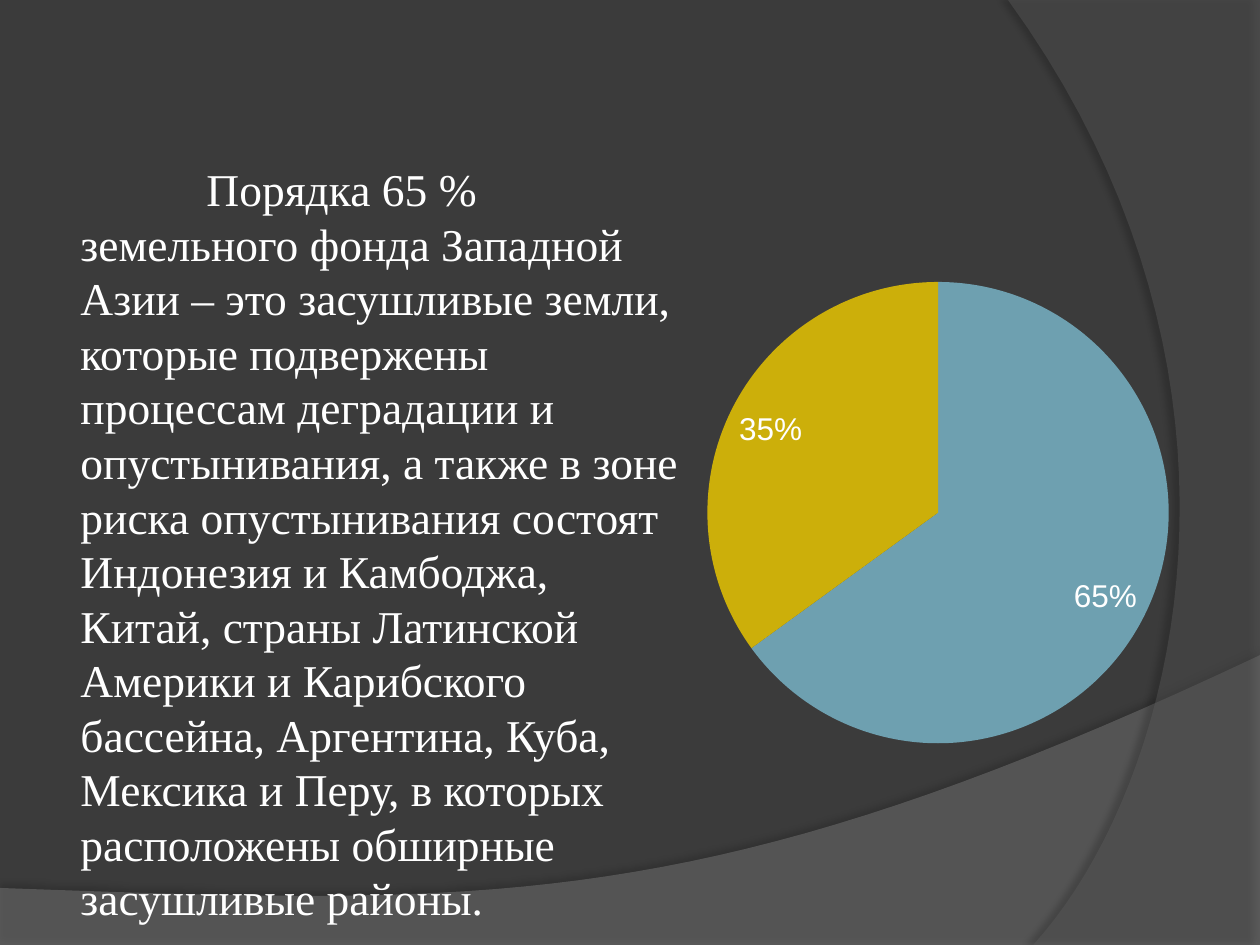
from lxml.etree import SubElement
from pptx import Presentation
from pptx.chart.data import CategoryChartData
from pptx.dml.color import RGBColor
from pptx.enum.chart import XL_CHART_TYPE, XL_LABEL_POSITION
from pptx.oxml.ns import qn
from pptx.util import Inches, Pt

WIDE, HIGH = 10, 7.5
INK = "FFFFFF"
BODY = (
    "Порядка 65 % земельного фонда Западной Азии – это засушливые земли, "
    "которые подвержены процессам деградации и опустынивания, а также в зоне "
    "риска опустынивания состоят Индонезия и Камбоджа, Китай, страны Латинской "
    "Америки и Карибского бассейна, Аргентина, Куба, Мексика и Перу, в которых "
    "расположены обширные засушливые районы."
)


def color(code):
    """Turn a hex string into a colour."""
    return RGBColor.from_string(code)


def place(box):
    """Turn percent shares of the slide into lengths."""
    return [Inches(part * side / 100) for part, side in zip(box, (WIDE, HIGH) * 2)]


def curve(ends, steps=40):
    """List the points of a cubic curve through four control points."""
    spots = []
    for step in range(steps + 1):
        t = step / steps
        parts = ((1 - t) ** 3, 3 * t * (1 - t) ** 2, 3 * t * t * (1 - t), t ** 3)
        spots.append(tuple(sum(p * end[k] for p, end in zip(parts, ends)) for k in (0, 1)))
    return spots


def add_band(slide, box, spots, fill, clear, shade):
    """Draw a see-through band with a soft shadow, its spots being shares of the box."""
    left, top, wide, high = place(box)
    points = [(round(left + x * wide), round(top + y * high)) for x, y in spots]
    form = slide.shapes.build_freeform(*points[0], scale=1.0)
    form.add_line_segments(points[1:], close=True)
    band = form.convert_to_shape()
    band.shadow.inherit = False
    band.line.fill.background()
    band.fill.solid()
    band.fill.fore_color.rgb = color(fill)
    props = band.element.spPr
    tint = props.find(qn("a:solidFill"))[0]
    SubElement(tint, qn("a:alpha"), val=str(clear * 1000))
    dark, blur, gap, turn = shade
    cast = SubElement(
        props.find(qn("a:effectLst")), qn("a:outerShdw"), blurRad=str(Pt(blur)),
        dist=str(Pt(gap)), dir=str(turn * 60000), algn="ctr", rotWithShape="0")
    tone = SubElement(cast, qn("a:srgbClr"), val="000000")
    SubElement(tone, qn("a:alpha"), val=str(dark * 1000))


def add_body(slide, box):
    """Write the paragraph with its first line set in."""
    frame = slide.shapes.add_textbox(*place(box)).text_frame
    frame.word_wrap = True
    para = frame.paragraphs[0]
    props = para._p.get_or_add_pPr()
    props.set("marL", str(Inches(0.04)))
    props.set("indent", str(Inches(1)))
    run = para.add_run()
    run.text = BODY
    run.font.name = "Times New Roman"
    run.font.size = Pt(26)
    run.font.color.rgb = color(INK)


def add_pie(slide, box):
    """Chart the share of dry land."""
    data = CategoryChartData(number_format="0%")
    data.categories = ["1", "2", "3", "4"]
    data.add_series("Series 1", (0.65, 0.35, None, None))
    chart = slide.shapes.add_chart(XL_CHART_TYPE.PIE, *place(box), data).chart
    chart.has_title = False
    chart.has_legend = False
    chart.font.name = "Arial"
    chart.font.size = Pt(18)
    chart.font.color.rgb = color(INK)
    plot = chart.plots[0]
    plot.vary_by_categories = True
    for rank, code in enumerate(("6EA0B0", "CCAF0A", "8D89A4", "748560")):
        fill = plot.series[0].points[rank].format.fill
        fill.solid()
        fill.fore_color.rgb = color(code)
    plot.has_data_labels = True
    marks = plot.data_labels
    marks.show_value = True
    marks.show_percentage = False
    marks.number_format = "0%"
    marks.number_format_is_linked = False
    marks.position = XL_LABEL_POSITION.INSIDE_END


def main():
    """Build and save the slide."""
    deck = Presentation()
    deck.slide_width, deck.slide_height = Inches(WIDE), Inches(HIGH)
    slide = deck.slides.add_slide(deck.slide_layouts[6])
    back = slide.background.fill
    back.solid()
    back.fore_color.rgb = color("3B3B3B")
    wave = [(0, 1), (1, 1)] + curve([(1, 0), (0.56, 0.9), (0.39, 0.86), (0, 0.8)])
    add_band(slide, (0, 69.33, 100, 30.8), wave, "7F7F7F", 45, (35, 4, 3.5, 270))
    arc = [(1, 0), (1, 1)] + curve([(0.1, 1), (0.68, 0.83), (1.09, 0.4), (0, 0)])
    add_band(slide, (80, 0, 20, 100), arc, "5E5E5E", 40, (45, 4, 4, 180))
    add_body(slide, (5, 16.4, 50.5, 77.7))
    add_pie(slide, (52.4, 28, 44.1, 52.5))
    deck.save("out.pptx")


if __name__ == "__main__":
    main()
